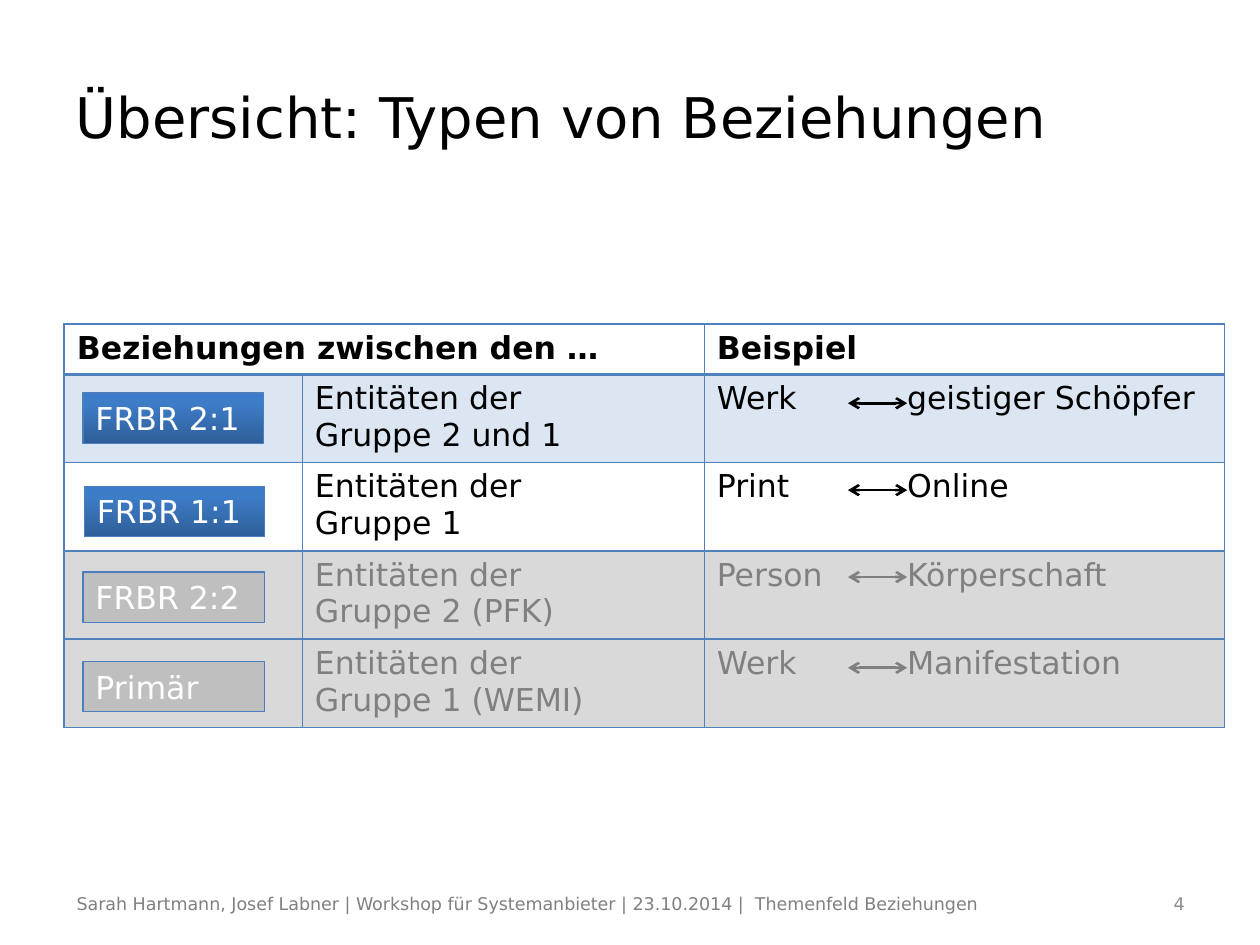
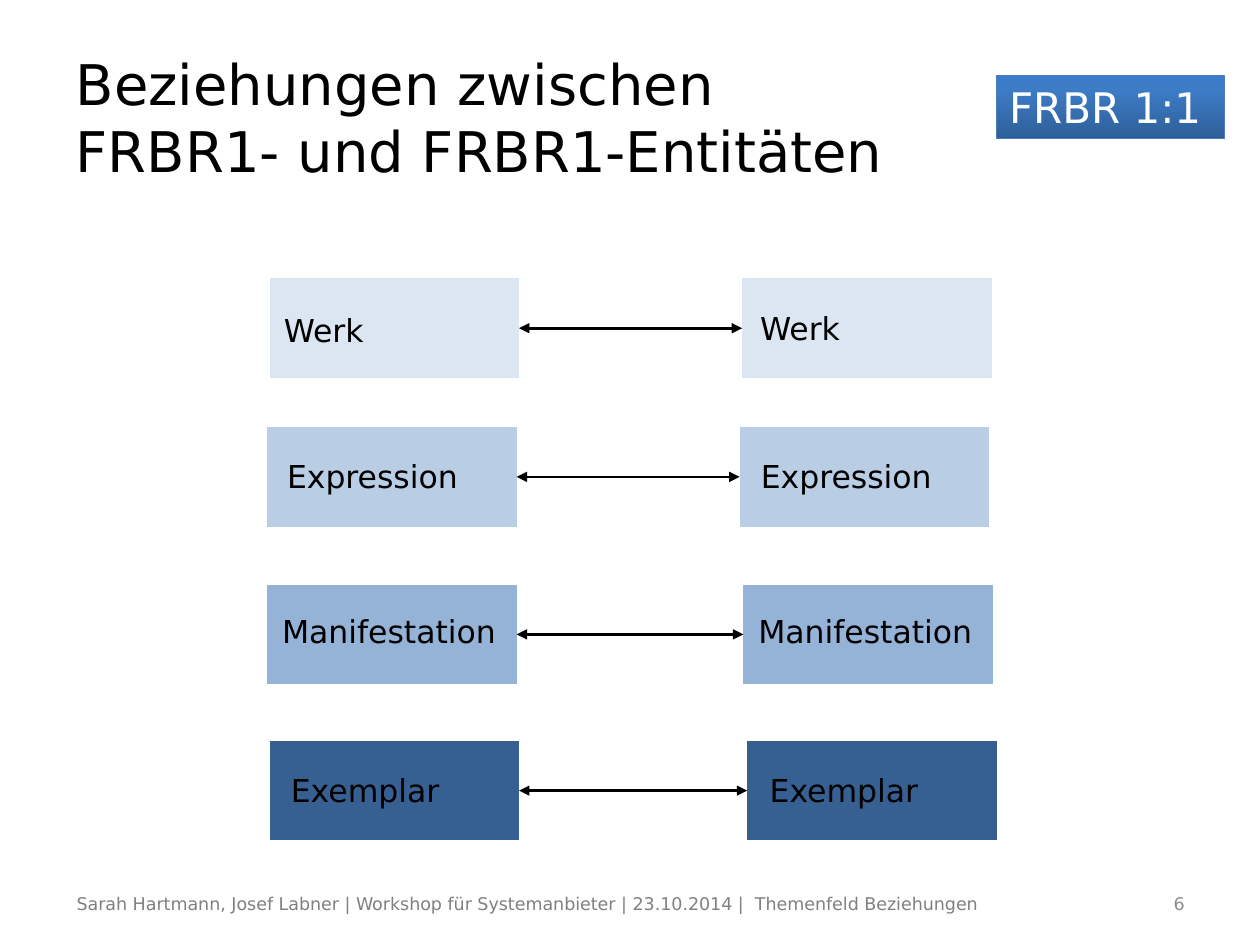
import copy
import dataclasses
import typing

import lxml.etree
import pptx
import pptx.dml.color
import pptx.dml.line
import pptx.enum.shapes
import pptx.enum.text
import pptx.oxml.ns
import pptx.presentation
import pptx.shapes.autoshape
import pptx.shapes.connector
import pptx.slide
import pptx.table
import pptx.text.text
import pptx.util

qn = pptx.oxml.ns.qn
ALIGN = pptx.enum.text.PP_ALIGN
ANCHOR = pptx.enum.text.MSO_ANCHOR
FORM = pptx.enum.shapes.MSO_SHAPE
LINK = pptx.enum.shapes.MSO_CONNECTOR


@dataclasses.dataclass(frozen=True)
class Theme:
    font: str = "DejaVu Sans"
    black: str = "000000"
    white: str = "FFFFFF"
    gray: str = "808080"
    number: str = "8C8C8C"
    pale: str = "DCE6F2"
    muted: str = "D9D9D9"
    silver: str = "BFBFBF"
    border: str = "4F81BD"
    edge: str = "4B7EBC"
    shine: tuple = ((0, "2F5F99"), (0.8, "3D7CC7"), (1, "3A7CCB"))
    title: int = 32
    badge: int = 24
    body: int = 18
    small: int = 10


class Box(typing.NamedTuple):
    left: float
    top: float
    width: float
    height: float


class Kind(typing.NamedTuple):
    badge: str
    group: str
    sample: str
    spot: Box
    arrow: float
    fill: str | None
    active: bool


class Label(typing.NamedTuple):
    shift: float
    drop: float
    width: float
    align: ALIGN = ALIGN.LEFT


class Level(typing.NamedTuple):
    name: str
    fill: str
    top: float
    left: float
    right: float
    labels: tuple[Label, Label]


THEME = Theme()
COLS, ROWS = 100, 75
UNIT = pptx.util.Inches(10) // COLS
FOOTER = ("Sarah Hartmann, Josef Labner | Workshop für Systemanbieter | "
          "23.10.2014 |  Themenfeld Beziehungen")
HEAD = Box(5, 3, 90, 12.5)
FOOT = Box(5.1, 69.7, 85, 4)
PAGE = Box(79.1, 69.7, 15.9, 4)
GRID = Box(5.1, 25.7, 92.1, 31.2)
WIDTHS = (18.9, 31.9, 41.3)
HEIGHTS = (3.9, 6.83, 6.83, 6.83, 6.83)
ARROW = (67.3, 72)
TAB = 15.1
BLOCK = (19.8, 7.9)

KINDS = (
    Kind("FRBR 2:1", "Entitäten der\nGruppe 2 und 1", "Werk\tgeistiger Schöpfer",
         Box(6.6, 31.2, 14.3, 4), 32, THEME.pale, True),
    Kind("FRBR 1:1", "Entitäten der\nGruppe 1", "Print\tOnline",
         Box(6.7, 38.6, 14.3, 4), 38.9, None, True),
    Kind("FRBR 2:2", "Entitäten der\nGruppe 2 (PFK)", "Person\tKörperschaft",
         Box(6.6, 45.4, 14.4, 4), 45.8, THEME.muted, False),
    Kind("Primär", "Entitäten der\nGruppe 1 (WEMI)", "Werk\tManifestation",
         Box(6.6, 52.5, 14.4, 4), 53, THEME.muted, False),
)

LEVELS = (
    Level("Werk", THEME.pale, 22.1, 21.4, 58.9,
          (Label(-2.4, 2.1, 13.4, ALIGN.CENTER), Label(-2.1, 1.9, 13.4, ALIGN.CENTER))),
    Level("Expression", "B9CDE5", 33.9, 21.2, 58.7,
          (Label(0.6, 1.9, 15.7), Label(0.7, 1.9, 15.7))),
    Level("Manifestation", "95B3D7", 46.4, 21.2, 59,
          (Label(0.2, 1.7, 19.7), Label(0.2, 1.7, 19.7))),
    Level("Exemplar", "376092", 58.8, 21.4, 59.3,
          (Label(0.7, 1.9, 15.8), Label(0.8, 1.9, 15.8))),
)


def span(units: float) -> int:
    return round(units * UNIT)


def place(box: Box) -> tuple[int, ...]:
    return tuple(map(span, box))


def tint(code: str) -> pptx.dml.color.RGBColor:
    return pptx.dml.color.RGBColor.from_string(code)


def write(frame: pptx.text.text.TextFrame, words: str, *, size: int = THEME.body,
          color: str = THEME.black, bold: bool = False, align: ALIGN = ALIGN.LEFT,
          anchor: ANCHOR | None = None, tab: float | None = None) -> None:
    frame.word_wrap = True
    if anchor is not None:
        frame.vertical_anchor = anchor
    for index, line in enumerate(words.split("\n")):
        para = frame.add_paragraph() if index else frame.paragraphs[0]
        para.text = line
        para.alignment = align
        if tab is not None:
            stops = lxml.etree.SubElement(para._p.get_or_add_pPr(), qn("a:tabLst"))
            lxml.etree.SubElement(stops, qn("a:tab"), pos=str(span(tab)), algn="l")
        for run in para.runs:
            run.font.name = THEME.font
            run.font.size = pptx.util.Pt(size)
            run.font.bold = bold
            run.font.color.rgb = tint(color)


def add_text(slide: pptx.slide.Slide, box: Box, words: str, **style) -> None:
    write(slide.shapes.add_textbox(*place(box)).text_frame, words, **style)


def add_block(slide: pptx.slide.Slide, box: Box, form: FORM, fill: str | None = None,
              edge: str | None = None) -> pptx.shapes.autoshape.Shape:
    shape = slide.shapes.add_shape(form, *place(box))
    shape.shadow.inherit = False
    if fill:
        shape.fill.solid()
        shape.fill.fore_color.rgb = tint(fill)
    if edge:
        shape.line.color.rgb = tint(edge)
        shape.line.width = pptx.util.Pt(0.75)
    else:
        shape.line.fill.background()
    return shape


def add_badge(slide: pptx.slide.Slide, box: Box, words: str, active: bool = True,
              size: int = THEME.body) -> None:
    shape = add_block(slide, box, FORM.RECTANGLE,
                      None if active else THEME.silver, THEME.edge)
    if active:
        shape.fill.gradient()
        shape.fill.gradient_angle = 90
        stops = next(shape._element.iter(qn("a:gsLst")))
        stops.append(copy.deepcopy(stops[-1]))
        for stop, (share, code) in zip(shape.fill.gradient_stops, THEME.shine):
            stop.position = share
            stop.color.rgb = tint(code)
    write(shape.text_frame, words, size=size, color=THEME.white, anchor=ANCHOR.TOP)


def add_arrow(slide: pptx.slide.Slide, start: tuple[float, float],
              end: tuple[float, float], color: str = THEME.black,
              tip: str = "arrow") -> pptx.shapes.connector.Connector:
    arrow = slide.shapes.add_connector(LINK.STRAIGHT, *map(span, start + end))
    arrow.line.color.rgb = tint(color)
    arrow.line.width = pptx.util.Pt(1.5)
    props = arrow._element.spPr
    for side in ("a:headEnd", "a:tailEnd"):
        lxml.etree.SubElement(props.find(qn("a:ln")), qn(side), type=tip)
    lxml.etree.SubElement(props, qn("a:effectLst"))
    return arrow


def frame_cell(cell: pptx.table._Cell, fill: str | None, **widths: float) -> None:
    props = cell._tc.get_or_add_tcPr()
    for side in "LRTB":
        width = pptx.util.Pt(widths.get(side, 1))
        line = lxml.etree.SubElement(props, qn(f"a:ln{side}"), w=str(width))
        solid = lxml.etree.SubElement(line, qn("a:solidFill"))
        lxml.etree.SubElement(solid, qn("a:srgbClr"), val=THEME.border)
    if fill:
        cell.fill.solid()
        cell.fill.fore_color.rgb = tint(fill)
    else:
        cell.fill.background()


def add_grid(slide: pptx.slide.Slide) -> None:
    table = slide.shapes.add_table(len(HEIGHTS), len(WIDTHS), *place(GRID)).table
    table.horz_banding = False
    for column, width in zip(table.columns, WIDTHS):
        column.width = span(width)
    for row, height in zip(table.rows, HEIGHTS):
        row.height = span(height)
    for cell in table.rows[0].cells:
        frame_cell(cell, None, B=2)
    table.cell(0, 0).merge(table.cell(0, 1))
    write(table.cell(0, 0).text_frame, "Beziehungen zwischen den …", bold=True)
    write(table.cell(0, 2).text_frame, "Beispiel", bold=True)
    for row, kind in enumerate(KINDS, 1):
        color = THEME.black if kind.active else THEME.gray
        for cell in table.rows[row].cells:
            frame_cell(cell, kind.fill, T=2 if row == 1 else 1)
        write(table.cell(row, 1).text_frame, kind.group, color=color)
        write(table.cell(row, 2).text_frame, kind.sample, color=color, tab=TAB)


def add_level(slide: pptx.slide.Slide, level: Level) -> None:
    ends = []
    for left, label in zip((level.left, level.right), level.labels):
        ends.append(add_block(slide, Box(left, level.top, *BLOCK),
                              FORM.FLOWCHART_PROCESS, level.fill))
        add_text(slide, Box(left + label.shift, level.top + label.drop, label.width, 4),
                 level.name, align=label.align)
    middle = level.top + BLOCK[1] / 2
    arrow = add_arrow(slide, (level.left + BLOCK[0], middle), (level.right, middle),
                      tip="triangle")
    arrow.begin_connect(ends[0], 3)
    arrow.end_connect(ends[1], 1)


def style_master(deck: pptx.presentation.Presentation) -> pptx.slide.SlideLayout:
    style = next(deck.slide_master.element.iter(qn("p:titleStyle")))
    style[0].set("algn", "l")
    next(style.iter(qn("a:defRPr"))).set("sz", str(THEME.title * 100))
    next(style.iter(qn("a:latin"))).set("typeface", THEME.font)
    layout = deck.slide_layouts.get_by_name("Title Only")
    title = layout.placeholders[0]
    title.left, title.top, title.width, title.height = place(HEAD)
    return layout


def add_page(deck: pptx.presentation.Presentation, layout: pptx.slide.SlideLayout,
             title: str, number: int) -> pptx.slide.Slide:
    slide = deck.slides.add_slide(layout)
    write(slide.shapes.title.text_frame, title, size=THEME.title, anchor=ANCHOR.MIDDLE)
    add_text(slide, FOOT, FOOTER, size=THEME.small, color=THEME.gray,
             anchor=ANCHOR.MIDDLE)
    add_text(slide, PAGE, str(number), size=THEME.small, color=THEME.number,
             align=ALIGN.RIGHT, anchor=ANCHOR.MIDDLE)
    return slide


def main() -> None:
    deck = pptx.Presentation()
    deck.slide_width, deck.slide_height = span(COLS), span(ROWS)
    layout = style_master(deck)

    types = add_page(deck, layout, "Übersicht: Typen von Beziehungen", 4)
    add_grid(types)
    for kind in KINDS:
        add_badge(types, kind.spot, kind.badge, kind.active)
        add_arrow(types, (ARROW[0], kind.arrow), (ARROW[1], kind.arrow),
                  THEME.black if kind.active else THEME.gray)

    pairs = add_page(deck, layout,
                     "Beziehungen zwischen\vFRBR1- und FRBR1-Entitäten", 6)
    add_badge(pairs, Box(79.1, 6, 18.1, 5), "FRBR 1:1", size=THEME.badge)
    for level in LEVELS:
        add_level(pairs, level)

    deck.save("out.pptx")


if __name__ == "__main__":
    main()
